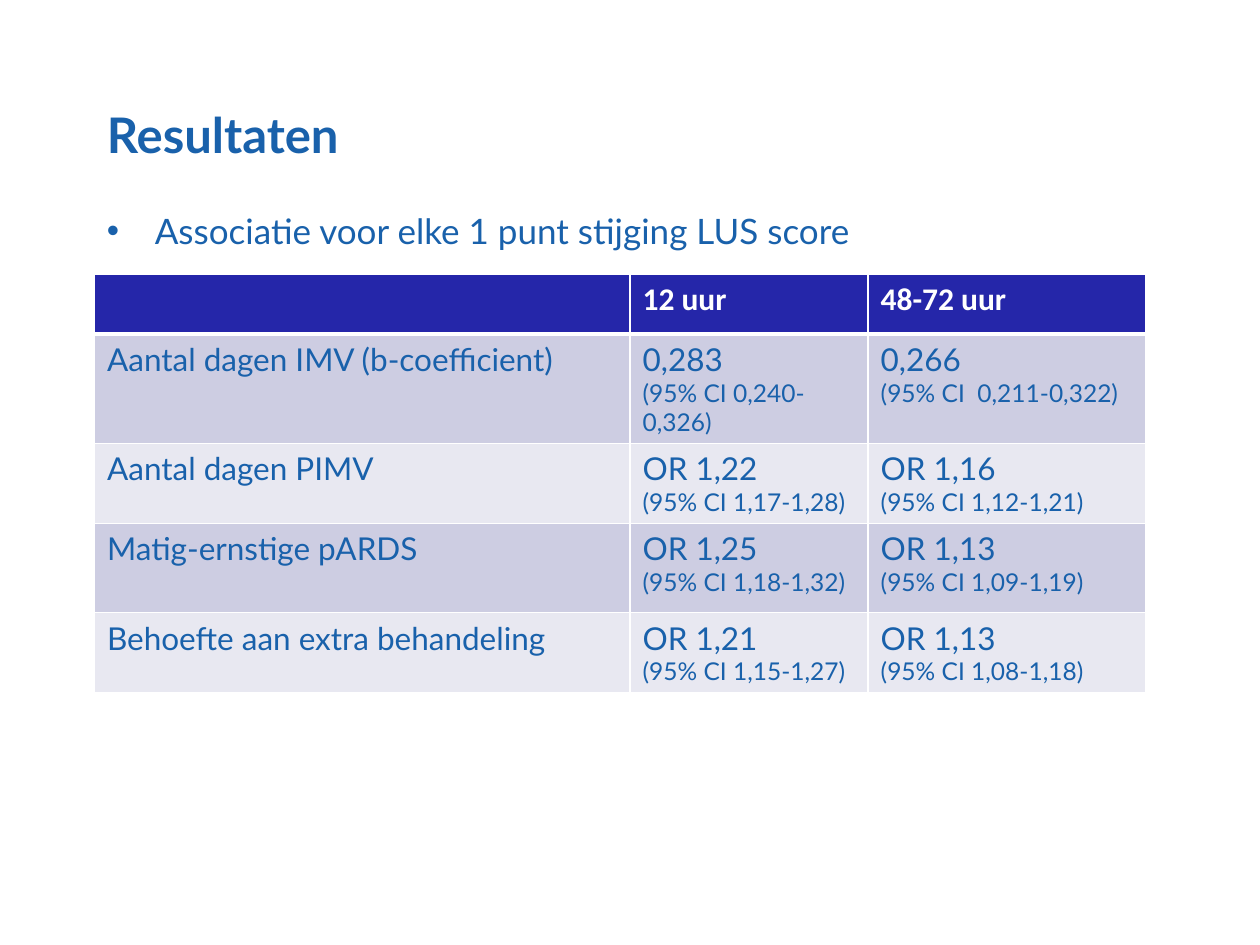
import pptx
import pptx.dml.color
import pptx.oxml
import pptx.oxml.ns
import pptx.util

BLUE, NAVY, WHITE = "1961AB", "2526A9", "FFFFFF"
BANDS = ["CDCDE2", "E8E8F1"]
LEFT, TEXT_WIDTH = 0.75, 8.25
COLUMN_WIDTHS = [4.25, 1.89, 2.2]
ROW_HEIGHTS = [0.47, 0.87, 0.63, 0.71, 0.63]
HEADINGS = ["", "12 uur", "48-72 uur"]
OUTCOMES = [
    ("Aantal dagen IMV (b-coefficient)",
     ("0,283", "(95% CI 0,240-0,326)"), ("0,266", "(95% CI  0,211-0,322)")),
    ("Aantal dagen PIMV",
     ("OR 1,22", "(95% CI 1,17-1,28)"), ("OR 1,16", "(95% CI 1,12-1,21)")),
    ("Matig-ernstige pARDS",
     ("OR 1,25", "(95% CI 1,18-1,32)"), ("OR 1,13", "(95% CI 1,09-1,19)")),
    ("Behoefte aan extra behandeling",
     ("OR 1,21", "(95% CI 1,15-1,27)"), ("OR 1,13", "(95% CI 1,08-1,18)")),
]


def rgb(code):
    """Return the colour for a hex string."""
    return pptx.dml.color.RGBColor.from_string(code)


def write(paragraph, text, size=18, color=BLUE, bold=False, font="Lato"):
    """Put formatted text in a paragraph."""
    paragraph.text = text
    style = paragraph.font if not text else paragraph.runs[0].font
    style.size, style.bold, style.name = pptx.util.Pt(size), bold, font
    style.color.rgb = rgb(color)


def add_text(slide, top, height, text, **style):
    """Add a wrapped text box in the content column and return its paragraph."""
    box = slide.shapes.add_textbox(*map(pptx.util.Inches, (LEFT, top, TEXT_WIDTH, height)))
    box.text_frame.word_wrap = True
    paragraph = box.text_frame.paragraphs[0]
    write(paragraph, text, **style)
    return paragraph


def add_bullet(paragraph, indent=0.38):
    """Give a paragraph a round bullet with a hanging indent."""
    properties = paragraph._p.get_or_add_pPr()
    distance = pptx.util.Inches(indent)
    properties.set("marL", str(distance))
    properties.set("indent", str(-distance))
    namespace = pptx.oxml.ns.nsdecls("a")
    properties.append(pptx.oxml.parse_xml(f'<a:buFont {namespace} typeface="Arial"/>'))
    properties.append(pptx.oxml.parse_xml(f'<a:buChar {namespace} char="•"/>'))


def paint_cell(cell, fill, top=1, bottom=1):
    """Set white borders and a solid fill on a cell."""
    properties = cell._tc.get_or_add_tcPr()
    for side, width in zip("LRTB", (1, 1, top, bottom)):
        properties.append(pptx.oxml.parse_xml(
            f'<a:ln{side} {pptx.oxml.ns.nsdecls("a")} w="{pptx.util.Pt(width)}"><a:solidFill>'
            f'<a:srgbClr val="{WHITE}"/></a:solidFill></a:ln{side}>'))
    cell.fill.solid()
    cell.fill.fore_color.rgb = rgb(fill)


def add_results(slide, top):
    """Add the table of associations per outcome."""
    frame = slide.shapes.add_table(
        len(ROW_HEIGHTS), len(COLUMN_WIDTHS),
        *map(pptx.util.Inches, (LEFT, top, sum(COLUMN_WIDTHS), sum(ROW_HEIGHTS))))
    results = frame.table
    for column, width in zip(results.columns, COLUMN_WIDTHS):
        column.width = pptx.util.Inches(width)
    for row, height in zip(results.rows, ROW_HEIGHTS):
        row.height = pptx.util.Inches(height)
    for index, heading in enumerate(HEADINGS):
        cell = results.cell(0, index)
        write(cell.text_frame.paragraphs[0], heading, color=WHITE, bold=True, font="Calibri")
        paint_cell(cell, NAVY, bottom=3)
    for number, (outcome, *estimates) in enumerate(OUTCOMES, 1):
        for index, lines in enumerate([(outcome,), *estimates]):
            cell = results.cell(number, index)
            write(cell.text_frame.paragraphs[0], lines[0])
            for interval in lines[1:]:
                write(cell.text_frame.add_paragraph(), interval, size=14)
            paint_cell(cell, BANDS[(number - 1) % 2], top=3 if number == 1 else 1)


def main():
    """Build the results slide and save it."""
    deck = pptx.Presentation()
    deck.slide_width, deck.slide_height = pptx.util.Inches(10), pptx.util.Inches(7.5)
    slide = deck.slides.add_slide(deck.slide_layouts[6])
    add_text(slide, 0.78, 0.89, "Resultaten", size=28, bold=True)
    add_results(slide, 2.18)
    add_bullet(add_text(slide, 1.61, 5.59,
                        "Associatie voor elke 1 punt stijging LUS score", size=20))
    deck.save("out.pptx")


if __name__ == "__main__":
    main()
